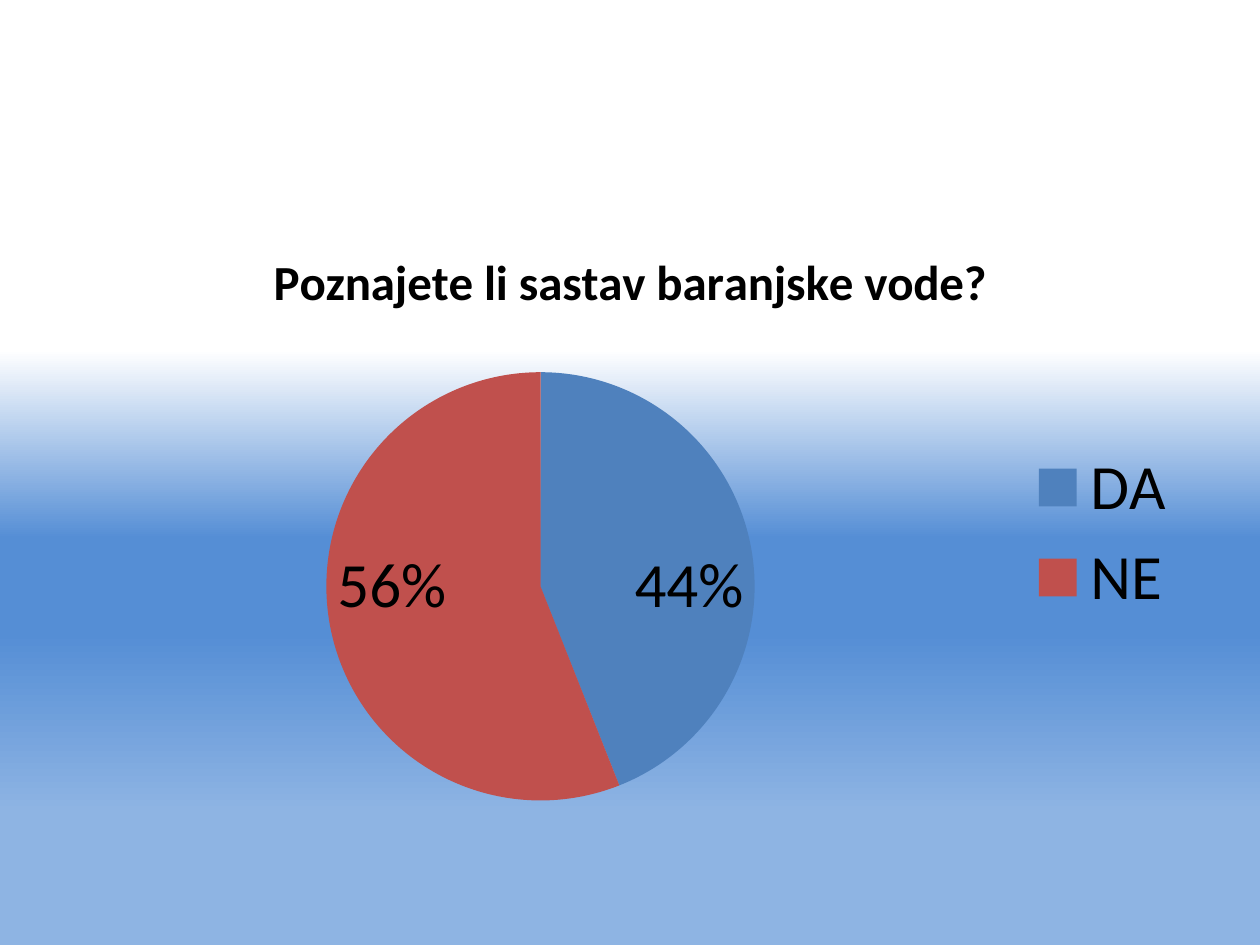
from copy import deepcopy

from pptx import Presentation
from pptx.chart.data import CategoryChartData
from pptx.dml.color import RGBColor
from pptx.enum.chart import XL_CHART_TYPE as ChartType
from pptx.enum.chart import XL_LABEL_POSITION as LabelPosition
from pptx.enum.chart import XL_LEGEND_POSITION as LegendPosition
from pptx.oxml.ns import qn
from pptx.util import Cm, Pt

COLORS = {
    "white": "FFFFFF",
    "deep blue": "558ED5",
    "pale blue": "8EB4E3",
    "text": "000000",
    "DA": "4F81BD",
    "NE": "C0504D",
}
FONT = "Calibri"
BACKGROUND_STOPS = [
    (0.37, "white"),
    (0.57, "deep blue"),
    (0.67, "deep blue"),
    (0.86, "pale blue"),
]
ANSWERS = {"DA": 44, "NE": 56}


def color(name):
    return RGBColor.from_string(COLORS[name])


def style_font(font, size, bold=False):
    font.name = FONT
    font.size = Pt(size)
    font.bold = bold
    font.color.rgb = color("text")


def paint_background(slide):
    fill = slide.background.fill
    fill.gradient()
    fill.gradient_angle = 270  # counter-clockwise: runs from top to bottom
    stop_list = slide.element.find(".//" + qn("a:gsLst"))
    while len(stop_list) < len(BACKGROUND_STOPS):
        stop_list.append(deepcopy(stop_list[0]))
    for stop, (position, name) in zip(fill.gradient_stops, BACKGROUND_STOPS):
        stop.position = position
        stop.color.rgb = color(name)


def add_answer_pie(slide, left, top, width, height):
    data = CategoryChartData(number_format="0")
    data.categories = list(ANSWERS)
    data.add_series("Series 1", list(ANSWERS.values()))
    chart = slide.shapes.add_chart(
        ChartType.PIE, left, top, width, height, data
    ).chart
    style_font(chart.font, 36)

    chart.has_title = True
    title = chart.chart_title
    title.include_in_layout = False
    run = title.text_frame.paragraphs[0].add_run()
    run.text = "Poznajete li sastav baranjske vode?"
    style_font(run.font, 28, bold=True)

    chart.has_legend = True
    chart.legend.position = LegendPosition.RIGHT
    chart.legend.include_in_layout = False
    style_font(chart.legend.font, 36)

    plot = chart.plots[0]
    plot.vary_by_categories = True
    for index, answer in enumerate(ANSWERS):
        fill = plot.series[0].points[index].format.fill
        fill.solid()
        fill.fore_color.rgb = color(answer)

    plot.has_data_labels = True
    labels = plot.data_labels
    labels.show_value = False
    labels.show_percentage = True
    labels.number_format = "0%"
    labels.number_format_is_linked = False
    labels.position = LabelPosition.INSIDE_END
    style_font(labels.font, 36)


def main():
    presentation = Presentation()
    presentation.slide_width = Cm(25.4)
    presentation.slide_height = Cm(19.05)
    slide = presentation.slides.add_slide(presentation.slide_layouts[6])
    paint_background(slide)
    add_answer_pie(slide, Cm(1.27), Cm(4.45), Cm(22.86), Cm(12.57))
    presentation.save("out.pptx")


if __name__ == "__main__":
    main()
